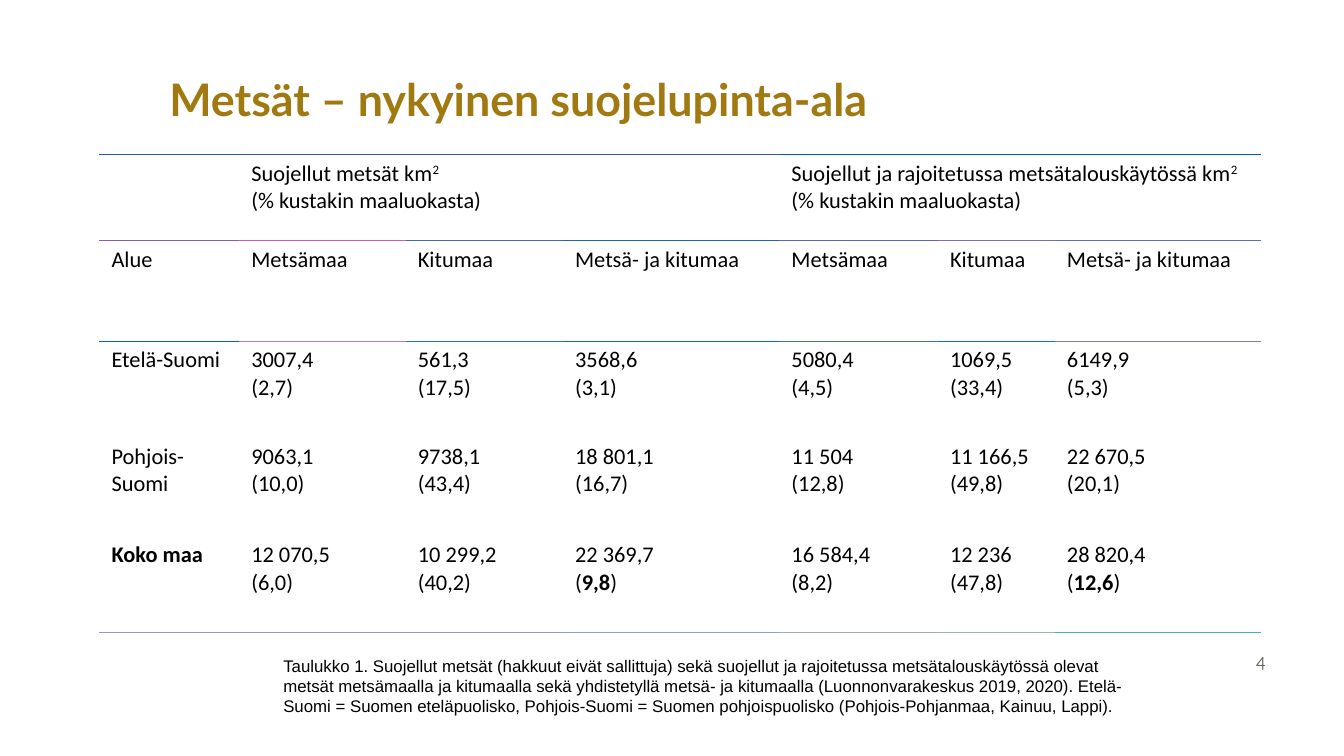
"""Builds a slide with a table of protected forest areas in Finland."""
from lxml.etree import SubElement
from pptx import Presentation
from pptx.dml.color import RGBColor
from pptx.enum.text import MSO_ANCHOR as ANCHOR, PP_ALIGN as ALIGN
from pptx.oxml.ns import qn
from pptx.util import Inches, Pt

BLACK = RGBColor(0, 0, 0)
GOLD = RGBColor(0xA0, 0x7A, 0x10)
GREY = RGBColor(0x62, 0x5D, 0x55)

TITLE = "Metsät – nykyinen suojelupinta-ala"
CAPTION = (
    "Taulukko 1. Suojellut metsät (hakkuut eivät sallittuja) sekä suojellut ja rajoitetussa "
    "metsätalouskäytössä olevat metsät metsämaalla ja kitumaalla sekä yhdistetyllä metsä- ja "
    "kitumaalla (Luonnonvarakeskus 2019, 2020). Etelä-Suomi = Suomen eteläpuolisko, "
    "Pohjois-Suomi = Suomen pohjoispuolisko (Pohjois-Pohjanmaa, Kainuu, Lappi)."
)
LAND_CLASSES = ["Metsämaa", "Kitumaa", "Metsä- ja kitumaa"]
SHARE = "(% kustakin maaluokasta)"
ROWS = [
    ["", f"Suojellut metsät km^2^\n{SHARE}", "", "",
     f"Suojellut ja rajoitetussa metsätalouskäytössä km^2^\n{SHARE}", "", ""],
    ["Alue"] + LAND_CLASSES * 2,
    ["Etelä-Suomi", "3007,4\n(2,7)", "561,3\n(17,5)", "3568,6\n(3,1)",
     "5080,4\n(4,5)", "1069,5\n(33,4)", "6149,9\n(5,3)"],
    ["Pohjois-Suomi", "9063,1\n(10,0)", "9738,1\n(43,4)", "18 801,1\n(16,7)",
     "11 504\n(12,8)", "11 166,5\n(49,8)", "22 670,5\n(20,1)"],
    ["*Koko maa*", "12 070,5\n(6,0)", "10 299,2\n(40,2)", "22 369,7\n(*9,8*)",
     "16 584,4\n(8,2)", "12 236\n(47,8)", "28 820,4\n(*12,6*)"],
]
COL_WIDTHS = [1.04, 1.24, 1.17, 1.61, 1.18, 0.87, 1.53]
ROW_HEIGHTS = [0.64, 0.75, 0.72, 0.73, 0.72]
SPANS = [(1, 3), (4, 6)]
RULES = {
    0: ["2059B5", "4057B5", "4057B5", "4057B5", "0058B5", "0058B5", "0058B5"],
    1: ["805EB5", "C060B5", "4068B5", "2064B5", "6064B5", "806AB5", "606BB5"],
    2: ["006CB5", "C077B5", "2078B5", "0072B5", "4073B5", "007CB5", "8079B5"],
    5: ["A096B5", "A09BB5", "A099B5", "80ACB5", "A0ADB5", "A0B0B5", "40B6B5"],
}
MARKS = {"*": ("b", "1"), "^": ("baseline", "30000")}


def set_format(target, values):
    for name, value in values.items():
        setattr(target, name, value)


def set_font(font, name, size, color, bold=False):
    set_format(font, {"name": name, "size": Pt(size), "bold": bold})
    font.color.rgb = color


def add_text(s, box, text, font, frame, paragraph):
    tf = s.shapes.add_textbox(*map(Inches, box)).text_frame
    set_format(tf, {"word_wrap": True, **frame})
    p = tf.paragraphs[0]
    set_format(p, paragraph)
    r = p.add_run()
    r.text = text
    set_font(r.font, *font)


def fill_cell(cell, text):
    tf = cell.text_frame
    for i, line in enumerate(text.split("\n")):
        p = tf.paragraphs[0] if i == 0 else tf.add_paragraph()
        set_font(p.font, "Calibri", 12, BLACK)
        mark = "^" if "^" in line else "*"
        for j, part in enumerate(line.split(mark)):
            if part:
                r = p.add_run()
                r.text = part
                set_font(r.font, "Calibri", 12, BLACK)
                if j % 2:
                    r.font._element.set(*MARKS[mark])


def set_borders(cell, top, bottom):
    props = cell._tc.get_or_add_tcPr()
    for side, color in (("L", None), ("R", None), ("T", top), ("B", bottom)):
        ln = SubElement(props, qn(f"a:ln{side}"), w=str(Pt(0.5)))
        if color:
            SubElement(SubElement(ln, qn("a:solidFill")), qn("a:srgbClr"), val=color)
        else:
            SubElement(ln, qn("a:noFill"))
    cell.fill.background()


def add_forest_table(s):
    frame = s.shapes.add_table(len(ROWS), len(COL_WIDTHS), Inches(0.74), Inches(1.15),
                               Inches(sum(COL_WIDTHS)), Inches(sum(ROW_HEIGHTS)))
    table = frame.table
    set_format(table, {"first_row": False, "horz_banding": False})
    table._tbl.tblPr[0].text = "{2D5ABB26-0587-4C30-8999-92F81FD0307C}"
    for column, width in zip(table.columns, COL_WIDTHS):
        column.width = Inches(width)
    for row, height in zip(table.rows, ROW_HEIGHTS):
        row.height = Inches(height)
    for first, last in SPANS:
        table.cell(0, first).merge(table.cell(0, last))
    blank = [None] * len(COL_WIDTHS)
    margins = {"margin_left": Inches(0.09), "margin_right": Inches(0.09),
               "margin_top": Inches(0.04), "margin_bottom": Inches(0.04)}
    for i, texts in enumerate(ROWS):
        for j, text in enumerate(texts):
            cell = table.cell(i, j)
            set_format(cell, margins)
            fill_cell(cell, text)
            set_borders(cell, RULES.get(i, blank)[j], RULES.get(i + 1, blank)[j])


def main():
    prs = Presentation()
    set_format(prs, {"slide_width": Inches(10), "slide_height": Inches(10 * 9 / 16)})
    s = prs.slides.add_slide(prs.slide_layouts[6])
    flush = dict.fromkeys(["margin_left", "margin_top", "margin_right", "margin_bottom"], 0)
    add_text(s, (9.19, 4.75, 0.38, 0.27), "4", ("Quicksand", 10, GREY),
             {**flush, "vertical_anchor": ANCHOR.BOTTOM}, {"alignment": ALIGN.CENTER})
    add_text(s, (1.26, 0.57, 7.48, 0.87), TITLE, ("Lato", 24, GOLD, True),
             flush, {"line_spacing": Pt(26)})
    add_forest_table(s)
    add_text(s, (2.01, 4.83, 6.46, 0.56), CAPTION, ("Arial", 9, BLACK), {}, {})
    prs.save("out.pptx")


if __name__ == "__main__":
    main()
